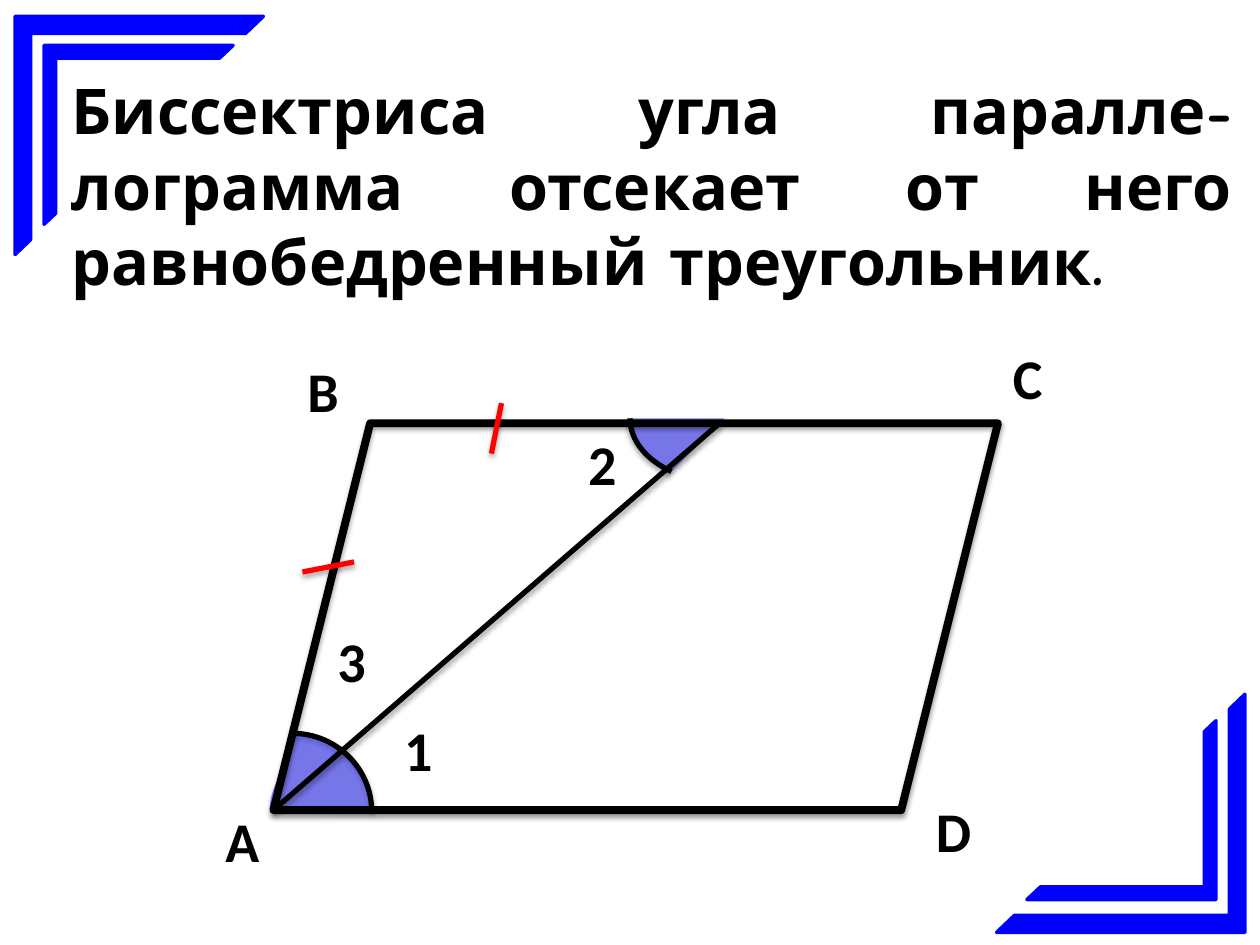
from lxml import etree
from pptx import Presentation
from pptx.dml.color import RGBColor
from pptx.enum.shapes import MSO_CONNECTOR as CONN, MSO_SHAPE as SHAPE
from pptx.enum.text import MSO_AUTO_SIZE as AUTO, PP_ALIGN as ALIGN
from pptx.oxml import parse_xml
from pptx.oxml.ns import qn
from pptx.util import Inches, Pt

NS = 'xmlns:a="http://schemas.openxmlformats.org/drawingml/2006/main"'
BLACK, BLUE, RED = "000000", "0000FF", "FF0000"


def color(value):
    return RGBColor.from_string(value)


def box(*lengths):
    return [Inches(n) for n in lengths]


def add_shadow(sp, alpha=35, dist=1.8):
    sp._element.spPr.append(parse_xml(
        f'<a:effectLst {NS}><a:outerShdw blurRad="{Pt(3.1)}" dist="{Pt(dist)}" '
        f'dir="5400000" rotWithShape="0"><a:srgbClr val="{BLACK}">'
        f'<a:alpha val="{alpha * 1000}"/></a:srgbClr></a:outerShdw></a:effectLst>'))


def paint(sp, line, width, fill=None, alpha=None):
    if fill:
        sp.fill.solid()
        sp.fill.fore_color.rgb = color(fill)
        if alpha:
            clr = sp._element.spPr.find(qn("a:solidFill"))[0]
            etree.SubElement(clr, qn("a:alpha")).set("val", str(alpha * 1000))
    else:
        sp.fill.background()
    sp.line.color.rgb = color(line)
    sp.line.width = Pt(width)


def add_text(s, text, left, top, width, height, size=32, font="Calibri",
             align=ALIGN.LEFT, wrap=False):
    tf = s.shapes.add_textbox(*box(left, top, width, height)).text_frame
    tf.word_wrap = wrap
    tf.auto_size = AUTO.SHAPE_TO_FIT_TEXT
    p = tf.paragraphs[0]
    p.alignment = align
    r = p.add_run()
    r.text = text
    r.font.size, r.font.name, r.font.bold = Pt(size), font, True
    r.font.color.rgb = color(BLACK)


def add_line(s, start, end, line=BLACK):
    c = s.shapes.add_connector(CONN.STRAIGHT, *box(*start, *end))
    c.line.color.rgb = color(line)
    c.line.width = Pt(3)
    add_shadow(c)


def add_corner(s, left, top, inset_x, inset_y, rotation=0):
    """Two nested half frames, the smaller one inset in the larger."""
    group = s.shapes.add_group_shape()
    for x, y, w, h in ((left, top, 1.97, 1.89),
                       (left + inset_x, top + inset_y, 1.5, 1.42)):
        sp = group.shapes.add_shape(SHAPE.HALF_FRAME, *box(x, y, w, h))
        sp.adjustments[0], sp.adjustments[1] = 0.072, 0.065
        sp.rotation = rotation
        paint(sp, BLUE, 2, BLUE)
        sp.shadow.inherit = False


def add_angle_at_bisector_end(s, left, top):
    sp = s.shapes.add_shape(SHAPE.ARC, *box(left, top, 1.5, 1.02))
    sp.adjustments[0], sp.adjustments[1] = 188.953, 0
    sp.rotation = 180
    paint(sp, BLACK, 3, BLUE, 45)
    add_shadow(sp)


def add_angle_at_a(s, left, top):
    """A filled sector whose outer arc alone is stroked."""
    fb = s.shapes.build_freeform(18, 0, scale=Inches(0.01))
    fb.add_line_segments([(81, 62), (0, 60)])
    sp = fb.convert_to_shape(*box(left, top))

    def curve(*points):
        pts = "".join(f'<a:pt x="{x}" y="{y}"/>' for x, y in points)
        return f"<a:cubicBezTo>{pts}</a:cubicBezTo>"

    start = '<a:moveTo><a:pt x="18" y="0"/></a:moveTo>'
    arc = start + curve((53, 0), (81, 28), (81, 62))
    side = ('<a:lnTo><a:pt x="0" y="60"/></a:lnTo>'
            + curve((0, 40), (18, 21), (18, 0)) + "<a:close/>")
    paths = sp._element.spPr.find(qn("a:custGeom")).find(qn("a:pathLst"))
    paths.getparent().replace(paths, parse_xml(
        f'<a:pathLst {NS}><a:path w="81" h="62" stroke="0">{arc}{side}</a:path>'
        f'<a:path w="81" h="62" fill="none">{arc}</a:path></a:pathLst>'))
    paint(sp, BLACK, 3, BLUE, 45)
    add_shadow(sp)


def add_figure(s, left, top, width, height):
    bottom = top + height
    sp = s.shapes.add_shape(SHAPE.PARALLELOGRAM, *box(left, top, width, height))
    paint(sp, BLACK, 4.5)
    add_shadow(sp, 38, 1.6)
    add_line(s, (left, bottom), (left + 3.54, top))

    labels = (("1", 0.94, 2.27, 0.43), ("2", 2.4, 0, 0.43),
              ("3", 0.41, 1.56, 0.43), ("А", -0.48, 2.99, 0.47),
              ("D", 5.16, 2.91, 0.48), ("C", 5.77, -0.68, 0.44),
              ("B", 0.17, -0.58, 0.45))
    for text, dx, dy, w in labels:
        add_text(s, text, left + dx, top + dy, w, 0.64)

    for (x1, y1), (x2, y2) in (((0.23, 1.18), (0.64, 1.1)),
                               ((1.81, -0.16), (1.73, 0.24))):
        add_line(s, (left + x1, top + y1), (left + x2, top + y2), RED)


def main():
    prs = Presentation()
    prs.slide_width, prs.slide_height = box(10, 7.5)
    s = prs.slides.add_slide(prs.slide_layouts[6])
    add_angle_at_bisector_end(s, 5, 2.81)
    add_angle_at_a(s, 2.14, 5.82)
    add_corner(s, 0.12, 0.13, 0.23, 0.23)
    add_corner(s, 7.91, 5.51, 0.24, 0.21, rotation=180)
    add_text(s, "Биссектриса угла паралле-лограмма отсекает от него "
             "равнобедренный треугольник.", 0.47, 0.52, 9.41, 1.92,
             size=36, font="Comic Neue", align=ALIGN.JUSTIFY, wrap=True)
    add_figure(s, 2.17, 3.36, 5.75, 3.07)
    prs.save("out.pptx")


if __name__ == "__main__":
    main()
